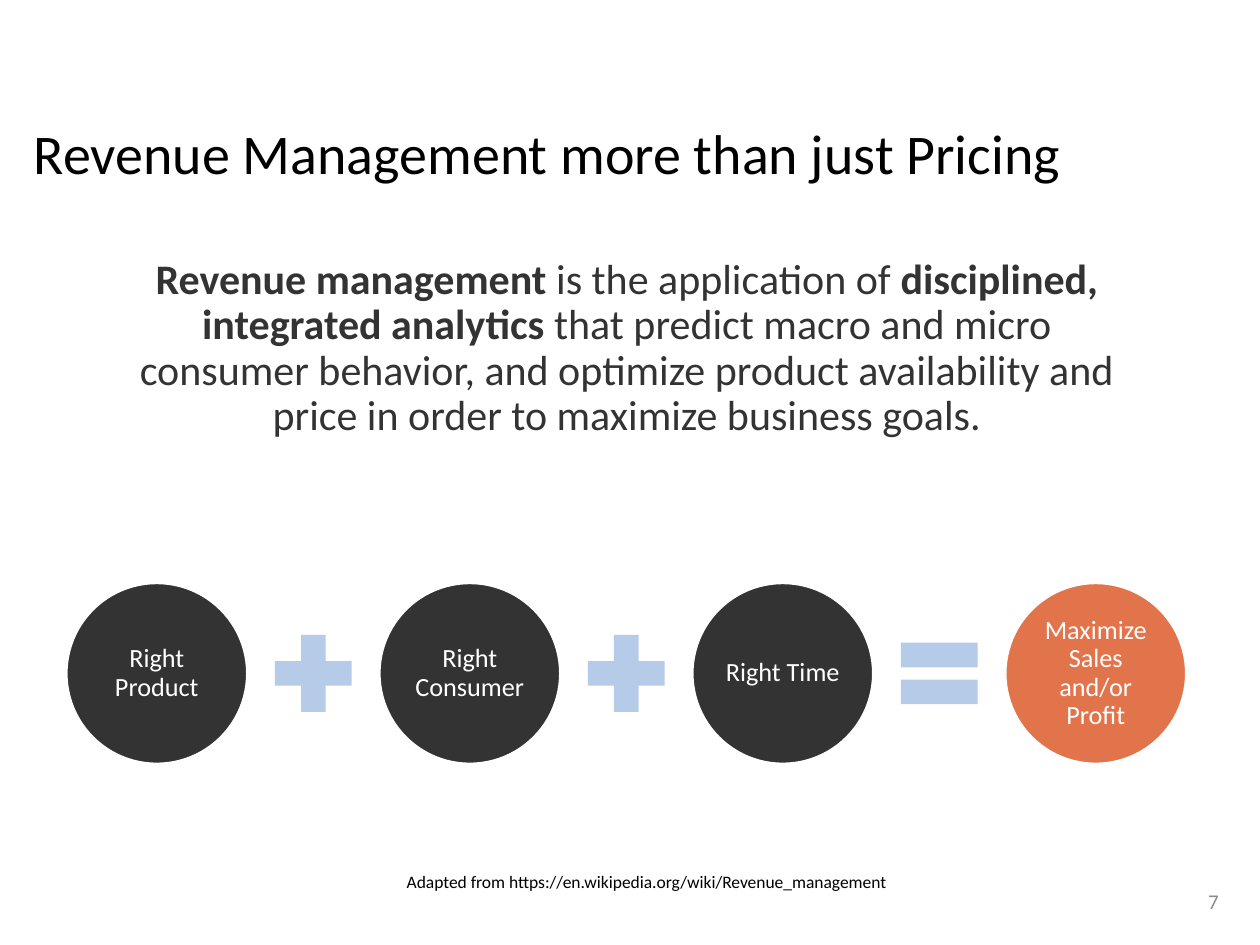
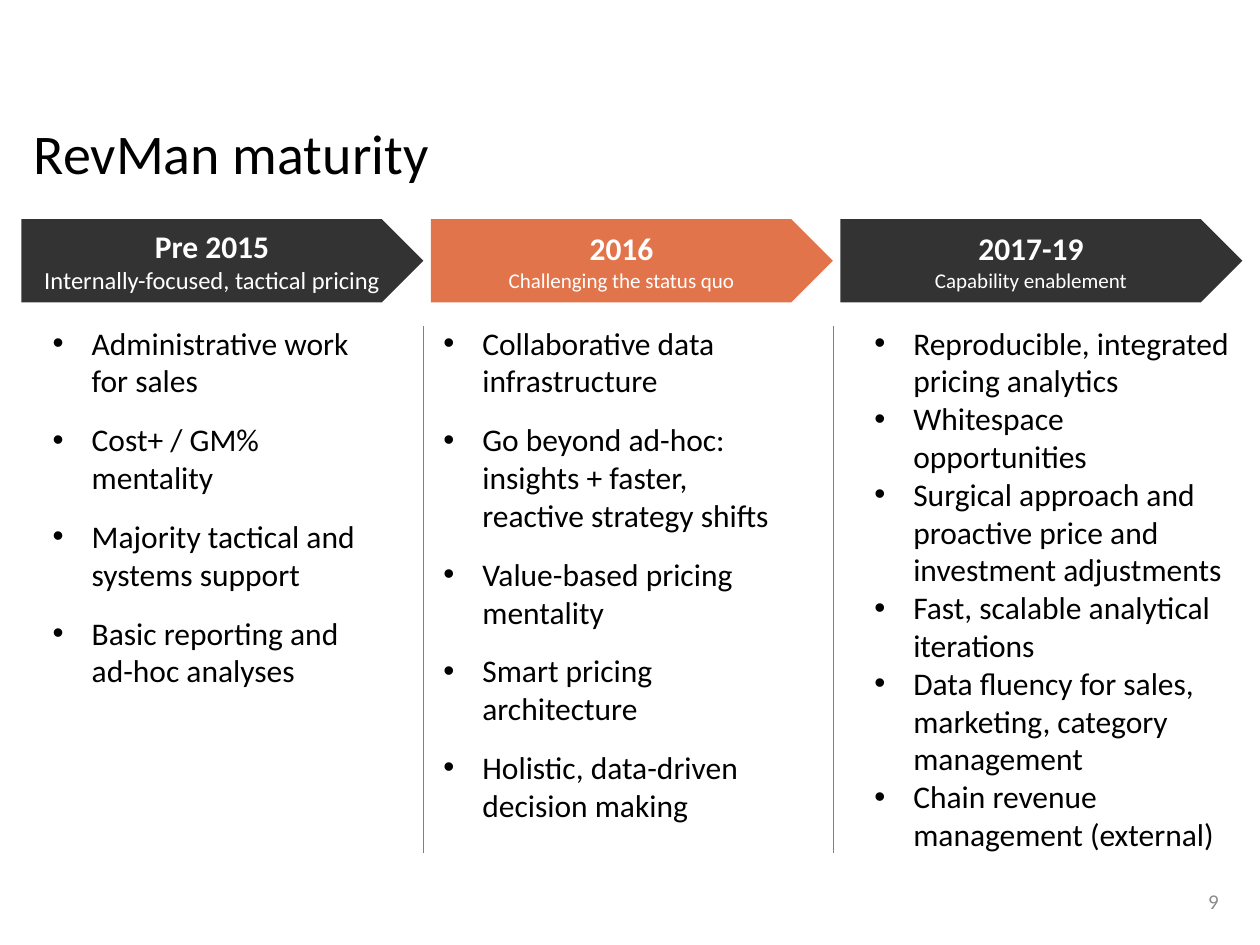
from dataclasses import dataclass
from typing import NamedTuple

from lxml import etree
from pptx import Presentation
from pptx.dml.color import RGBColor
from pptx.enum.shapes import MSO_CONNECTOR, MSO_SHAPE
from pptx.enum.text import MSO_ANCHOR, PP_ALIGN
from pptx.oxml.ns import qn
from pptx.util import Inches, Pt

LEFT, CENTER, RIGHT = PP_ALIGN.LEFT, PP_ALIGN.CENTER, PP_ALIGN.RIGHT
TOP, MIDDLE = MSO_ANCHOR.TOP, MSO_ANCHOR.MIDDLE
OVAL, ARROW = MSO_SHAPE.OVAL, MSO_SHAPE.PENTAGON
PLUS, EQUAL = MSO_SHAPE.MATH_PLUS, MSO_SHAPE.MATH_EQUAL
STRAIGHT = MSO_CONNECTOR.STRAIGHT

FONT = "Calibri"
BLACK, WHITE, DARK = "000000", "FFFFFF", "333333"
ORANGE, BLUE, GRAY, RULE = "E2744C", "B5CBE7", "8C8C8C", "808080"

# The slide is a grid of 100 columns by 75 rows.
COLS, ROWS = 100, 75
CELL = Inches(0.1)


class Box(NamedTuple):
    col: float
    row: float
    wide: float
    high: float

    def place(self) -> list[int]:
        return [round(n * CELL) for n in self]


class Run(NamedTuple):
    text: str
    size: float
    color: str = BLACK
    bold: bool = False


@dataclass(frozen=True)
class Style:
    align: PP_ALIGN = LEFT
    anchor: MSO_ANCHOR = TOP
    line: float = 1.0
    gap: float = 0
    bullet: bool = False
    wrap: bool = True


class Ball(NamedTuple):
    text: str
    fill: str
    sign: MSO_SHAPE | None


class Stage(NamedTuple):
    head: str
    note: str
    size: float
    fill: str
    left: float
    wide: float
    gap: float
    points: list[str]


TITLE = Style(anchor=MIDDLE, line=0.9)
BODY = Style(align=CENTER, line=0.9)
DISC = Style(align=CENTER, anchor=MIDDLE, line=0.9)
BAND = Style(align=CENTER, anchor=MIDDLE)
NUMBER = Style(align=RIGHT, anchor=MIDDLE)
SOURCE = Style(wrap=False)

TITLE_BOX = Box(1.7, 8.6, 96, 7.6)
NUMBER_BOX = Box(75.2, 69.5, 22.5, 4)

BALL_LEFT, BALL_TOP, BALL_SIZE, BALL_STEP = 5.3, 46.3, 14.3, 24.84
SIGN_SIZE = 8.3
SIGN_GAP = (BALL_STEP - BALL_SIZE - SIGN_SIZE) / 2

STAGE_LEFT, STAGE_STEP, STAGE_WIDE = 1.7, 32.5, 31.9
BAND_TOP, BAND_HIGH = 17.4, 6.6
LIST_TOP, LIST_HIGH = 25.2, 43.4
RULE_TOP, RULE_END = 25.9, 67.7

BALLS = [
    Ball("Right Product", DARK, PLUS),
    Ball("Right Consumer", DARK, PLUS),
    Ball("Right Time", DARK, EQUAL),
    Ball("Maximize Sales and/or Profit", ORANGE, None),
]

STAGES = [
    Stage("Pre 2015", "Internally-focused, tactical pricing", 14, DARK, 3.2, 28.3, 6, [
        "Administrative work for sales",
        "Cost+ / GM% mentality",
        "Majority tactical and systems support",
        "Basic reporting and ad-hoc analyses",
    ]),
    Stage("2016", "Challenging the status quo", 12, ORANGE, 34.2, 29.9, 6, [
        "Collaborative data infrastructure",
        "Go beyond ad-hoc: insights + faster, reactive strategy shifts",
        "Value-based pricing mentality",
        "Smart pricing architecture",
        "Holistic, data-driven decision making",
    ]),
    Stage("2017-19", "Capability enablement", 12, DARK, 68.4, 30.8, 0, [
        "Reproducible, integrated pricing analytics",
        "Whitespace opportunities",
        "Surgical approach and proactive price and investment adjustments",
        "Fast, scalable analytical iterations",
        "Data fluency for sales, marketing, category management",
        "Chain revenue management (external)",
    ]),
]


def paint(target, color: str) -> None:
    """Give a fill or a line one solid colour."""
    target.solid()
    target.fore_color.rgb = RGBColor.from_string(color)


def add_bullet(para) -> None:
    props = para._p.get_or_add_pPr()
    indent = Inches(0.31)
    props.set("marL", str(indent))
    props.set("indent", str(-indent))
    face = etree.SubElement(props, qn("a:buFont"))
    face.set("typeface", "Arial")
    etree.SubElement(props, qn("a:buChar")).set("char", "•")


def write(shape, lines: list[list[Run]], style: Style) -> None:
    """Fill a shape with paragraphs, each a list of runs."""
    frame = shape.text_frame
    frame.word_wrap = style.wrap
    frame.vertical_anchor = style.anchor
    for i, runs in enumerate(lines):
        para = frame.add_paragraph() if i else frame.paragraphs[0]
        if style.bullet:
            add_bullet(para)
        para.alignment = style.align
        para.line_spacing = style.line
        para.space_before = Pt(style.gap if i else 0)
        para.space_after = Pt(style.gap)
        for item in runs:
            run = para.add_run()
            run.text = item.text
            run.font.name = FONT
            run.font.size = Pt(item.size)
            run.font.bold = item.bold
            run.font.color.rgb = RGBColor.from_string(item.color)


def add_text(slide, box: Box, lines: list[list[Run]], style: Style) -> None:
    write(slide.shapes.add_textbox(*box.place()), lines, style)


def add_form(slide, kind: MSO_SHAPE, box: Box, fill: str, edge: str | None = None):
    form = slide.shapes.add_shape(kind, *box.place())
    form.shadow.inherit = False
    paint(form.fill, fill)
    if edge:
        paint(form.line.fill, edge)
        form.line.width = Pt(1)
    else:
        form.line.fill.background()
    return form


def add_rule(slide, col: float) -> None:
    """Draw a thin upright line between two stages."""
    x, top, end = (round(n * CELL) for n in (col, RULE_TOP, RULE_END))
    rule = slide.shapes.add_connector(STRAIGHT, x, top, x, end)
    paint(rule.line.fill, RULE)
    rule.line.width = Pt(0.25)
    etree.SubElement(rule._element.spPr, qn("a:effectLst"))


def add_page(deck, title: str, number: int):
    slide = deck.slides.add_slide(deck.slide_layouts[6])
    add_text(slide, TITLE_BOX, [[Run(title, 32)]], TITLE)
    add_text(slide, NUMBER_BOX, [[Run(str(number), 12, GRAY)]], NUMBER)
    return slide


def add_ball(slide, i: int, ball: Ball) -> None:
    left = BALL_LEFT + i * BALL_STEP
    disc = add_form(slide, OVAL, Box(left, BALL_TOP, BALL_SIZE, BALL_SIZE), ball.fill, WHITE)
    frame = disc.text_frame
    frame.margin_left = frame.margin_right = Inches(0.02)
    frame.margin_top = frame.margin_bottom = Inches(0.02)
    write(disc, [[Run(ball.text, 15, WHITE)]], DISC)
    if ball.sign:
        top = BALL_TOP + (BALL_SIZE - SIGN_SIZE) / 2
        box = Box(left + BALL_SIZE + SIGN_GAP, top, SIGN_SIZE, SIGN_SIZE)
        add_form(slide, ball.sign, box, BLUE)


def add_stage(slide, i: int, stage: Stage) -> None:
    left = STAGE_LEFT + i * STAGE_STEP
    band = add_form(slide, ARROW, Box(left, BAND_TOP, STAGE_WIDE, BAND_HIGH), stage.fill)
    write(band, [[Run(stage.head, 18, WHITE, True)],
                 [Run(stage.note, stage.size, WHITE)]], BAND)
    add_text(slide, Box(stage.left, LIST_TOP, stage.wide, LIST_HIGH),
             [[Run(point, 18)] for point in stage.points],
             Style(gap=stage.gap, bullet=True))
    if i < len(STAGES) - 1:
        add_rule(slide, left + STAGE_WIDE)


def build_mix(deck) -> None:
    slide = add_page(deck, "Revenue Management more than just Pricing", 7)
    add_text(slide, Box(8.5, 20, 82.5, 16.8), [[
        Run("Revenue management", 24, DARK, True),
        Run(" is the application of ", 24, DARK),
        Run("disciplined, integrated analytics", 24, DARK, True),
        Run(" that predict macro and micro consumer behavior, and optimize "
            "product availability and price in order to maximize business goals.", 24, DARK),
    ]], BODY)
    for i, ball in enumerate(BALLS):
        add_ball(slide, i, ball)
    add_text(slide, Box(31.3, 68.6, 40.6, 2.7), [[
        Run("Adapted from https://en.wikipedia.org/wiki/Revenue_management", 10),
    ]], SOURCE)


def build_growth(deck) -> None:
    slide = add_page(deck, "RevMan maturity", 9)
    for i, stage in enumerate(STAGES):
        add_stage(slide, i, stage)


def main() -> None:
    deck = Presentation()
    deck.slide_width, deck.slide_height = COLS * CELL, ROWS * CELL
    build_mix(deck)
    build_growth(deck)
    deck.save("out.pptx")


if __name__ == "__main__":
    main()
